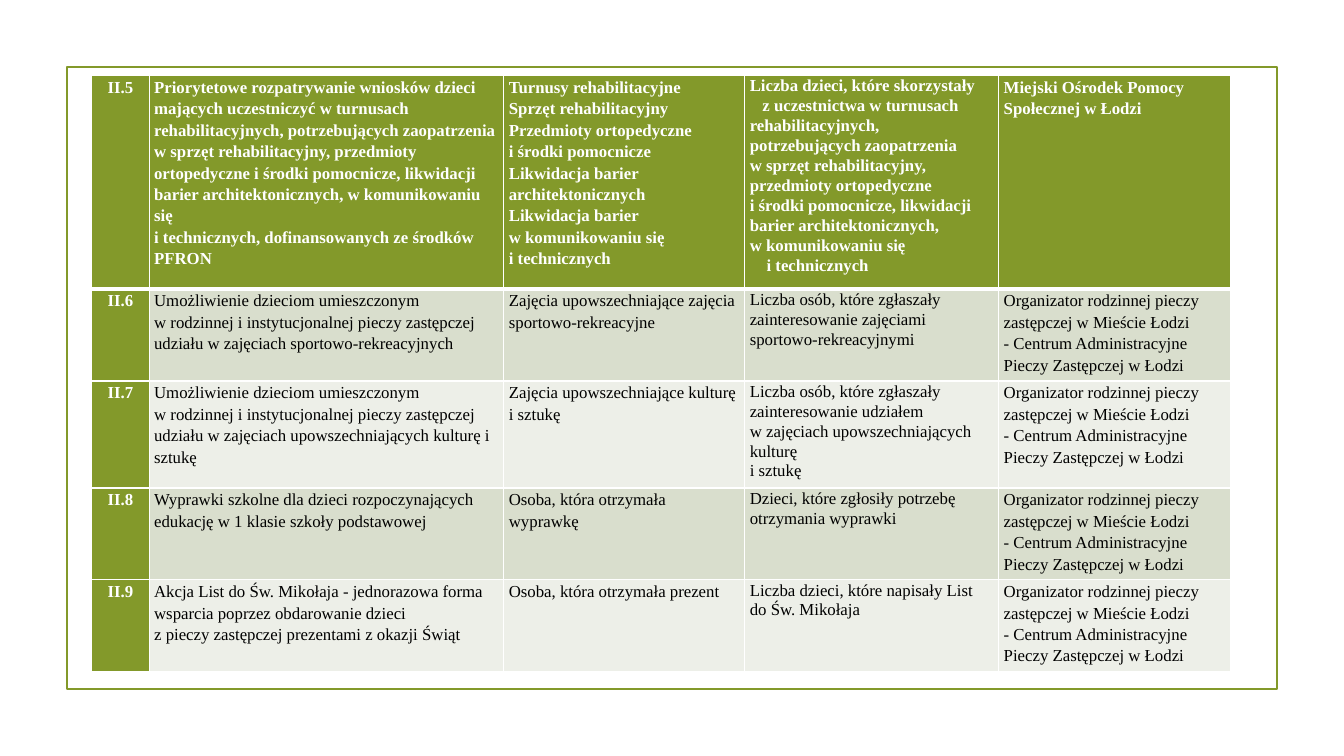
from lxml import etree
from pptx import Presentation
from pptx.dml.color import RGBColor
from pptx.enum import shapes, text
from pptx.oxml.ns import qn
from pptx.util import Pt

GREEN, WHITE, BLACK = "83992A", "FFFFFF", "000000"
BANDS = ["EDEFE8", "D9DECD"]
COLUMNS = [41, 253.4, 172.1, 181.4, 165.6]
ROW_HEIGHTS = [152.6, 65.6, 76.4, 65.6, 65.6]
INDICATOR_COLUMN = 3

# Cells hold one paragraph per line; a pair adds a first-line indent in points
ORGANIZER = ["Organizator rodzinnej pieczy zastępczej w Mieście Łodzi",
             "- Centrum Administracyjne Pieczy Zastępczej w Łodzi"]
CHILDREN = "Umożliwienie dzieciom umieszczonym"
ROWS = [
    [["II.5"],
     ["Priorytetowe rozpatrywanie wniosków dzieci mających uczestniczyć w turnusach "
      "rehabilitacyjnych, potrzebujących zaopatrzenia w sprzęt rehabilitacyjny, przedmioty "
      "ortopedyczne i środki pomocnicze, likwidacji barier architektonicznych, "
      "w komunikowaniu się",
      "i technicznych, dofinansowanych ze środków PFRON"],
     ["Turnusy rehabilitacyjne", "Sprzęt rehabilitacyjny", "Przedmioty ortopedyczne",
      "i środki pomocnicze", "Likwidacja barier architektonicznych", "Likwidacja barier",
      "w komunikowaniu się", "i technicznych"],
     ["Liczba dzieci, które skorzystały",
      ("z uczestnictwa w turnusach rehabilitacyjnych, potrzebujących zaopatrzenia", 9),
      "w sprzęt rehabilitacyjny, przedmioty ortopedyczne",
      "i środki pomocnicze, likwidacji barier architektonicznych,",
      "w komunikowaniu się", ("i technicznych", 12)],
     ["Miejski Ośrodek Pomocy Społecznej w Łodzi"]],
    [["II.6"],
     [CHILDREN, "w rodzinnej i instytucjonalnej pieczy zastępczej udziału w zajęciach "
      "sportowo-rekreacyjnych"],
     ["Zajęcia upowszechniające zajęcia sportowo-rekreacyjne"],
     ["Liczba osób, które zgłaszały zainteresowanie zajęciami sportowo-rekreacyjnymi"],
     ORGANIZER],
    [["II.7"],
     [CHILDREN, "w rodzinnej i instytucjonalnej pieczy zastępczej udziału w zajęciach "
      "upowszechniających kulturę i sztukę"],
     ["Zajęcia upowszechniające kulturę i sztukę"],
     ["Liczba osób, które zgłaszały zainteresowanie udziałem",
      "w zajęciach upowszechniających kulturę", "i sztukę"],
     ORGANIZER],
    [["II.8"],
     ["Wyprawki szkolne dla dzieci rozpoczynających edukację w 1 klasie szkoły podstawowej"],
     ["Osoba, która otrzymała wyprawkę"],
     ["Dzieci, które zgłosiły potrzebę otrzymania wyprawki"],
     ORGANIZER],
    [["II.9"],
     ["Akcja List do Św. Mikołaja - jednorazowa forma wsparcia poprzez obdarowanie dzieci",
      "z pieczy zastępczej prezentami z okazji Świąt"],
     ["Osoba, która otrzymała prezent"],
     ["Liczba dzieci, które napisały List do Św. Mikołaja"],
     ORGANIZER],
]


def color(value):
    return RGBColor.from_string(value)


def add_frame(s, x, y, w, h):
    sp = s.shapes.add_shape(shapes.MSO_SHAPE.RECTANGLE, Pt(x), Pt(y), Pt(w), Pt(h))
    sp.shadow.inherit = False
    sp.fill.background()
    sp.line.color.rgb = color(GREEN)
    sp.line.width = Pt(1.25)


def set_borders(cell, top, bottom):
    tcPr = cell._tc.get_or_add_tcPr()
    for side, width in (("L", 1), ("R", 1), ("T", top), ("B", bottom)):
        ln = etree.SubElement(tcPr, qn("a:ln" + side), w=str(Pt(width)))
        fill = etree.SubElement(ln, qn("a:solidFill"))
        etree.SubElement(fill, qn("a:srgbClr"), val=WHITE)


def fill_cell(cell, paragraphs, row, col):
    strong = row == 0 or col == 0
    # Borders come before the fill in the cell properties
    set_borders(cell, 3 if row == 1 else 1, 3 if row == 0 else 1)
    cell.fill.solid()
    cell.fill.fore_color.rgb = color(GREEN if strong else BANDS[row % 2])
    cell.margin_left = cell.margin_right = Pt(3.6)
    cell.margin_top = cell.margin_bottom = 0

    tf = cell.text_frame
    for i, item in enumerate(paragraphs):
        words, indent = item if isinstance(item, tuple) else (item, 0)
        p = tf.paragraphs[0] if i == 0 else tf.add_paragraph()
        p.text = words
        p.line_spacing = 1.07 if col == INDICATOR_COLUMN else 1.15
        p.alignment = text.PP_ALIGN.CENTER if col == 0 else text.PP_ALIGN.LEFT
        if indent:
            p._p.get_or_add_pPr().set("indent", str(Pt(indent)))
        for r in p.runs:
            r.font.name = "Times New Roman"
            r.font.size = Pt(12)
            r.font.bold = strong
            r.font.color.rgb = color(WHITE if strong else BLACK)


def add_tasks_table(s, x, y):
    table = s.shapes.add_table(len(ROWS), len(COLUMNS), Pt(x), Pt(y),
                               Pt(sum(COLUMNS)), Pt(sum(ROW_HEIGHTS))).table
    table.first_row = table.horz_banding = False
    for column, width in zip(table.columns, COLUMNS):
        column.width = Pt(width)
    for i, cells in enumerate(ROWS):
        table.rows[i].height = Pt(ROW_HEIGHTS[i])
        for j, paragraphs in enumerate(cells):
            fill_cell(table.cell(i, j), paragraphs, i, j)


def add_tasks_slide(prs, x, y, w, h):
    s = prs.slides.add_slide(prs.slide_layouts[6])
    add_frame(s, x, y, w, h)
    add_tasks_table(s, x + 17.5, y + 6)


def main():
    prs = Presentation()
    prs.slide_width, prs.slide_height = Pt(960), Pt(540)
    add_tasks_slide(prs, 48, 48, 864, 444)
    prs.save("out.pptx")


if __name__ == "__main__":
    main()
